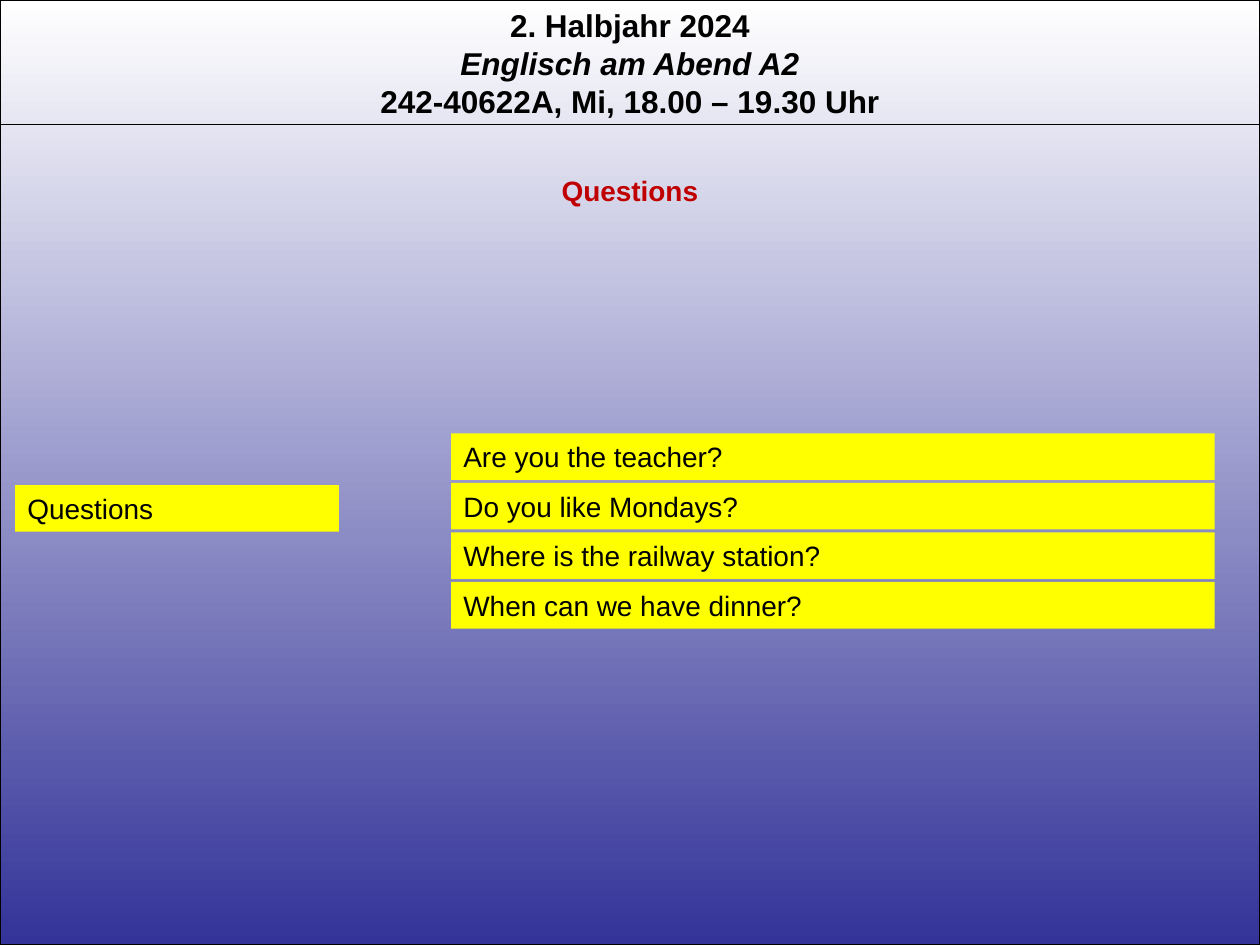
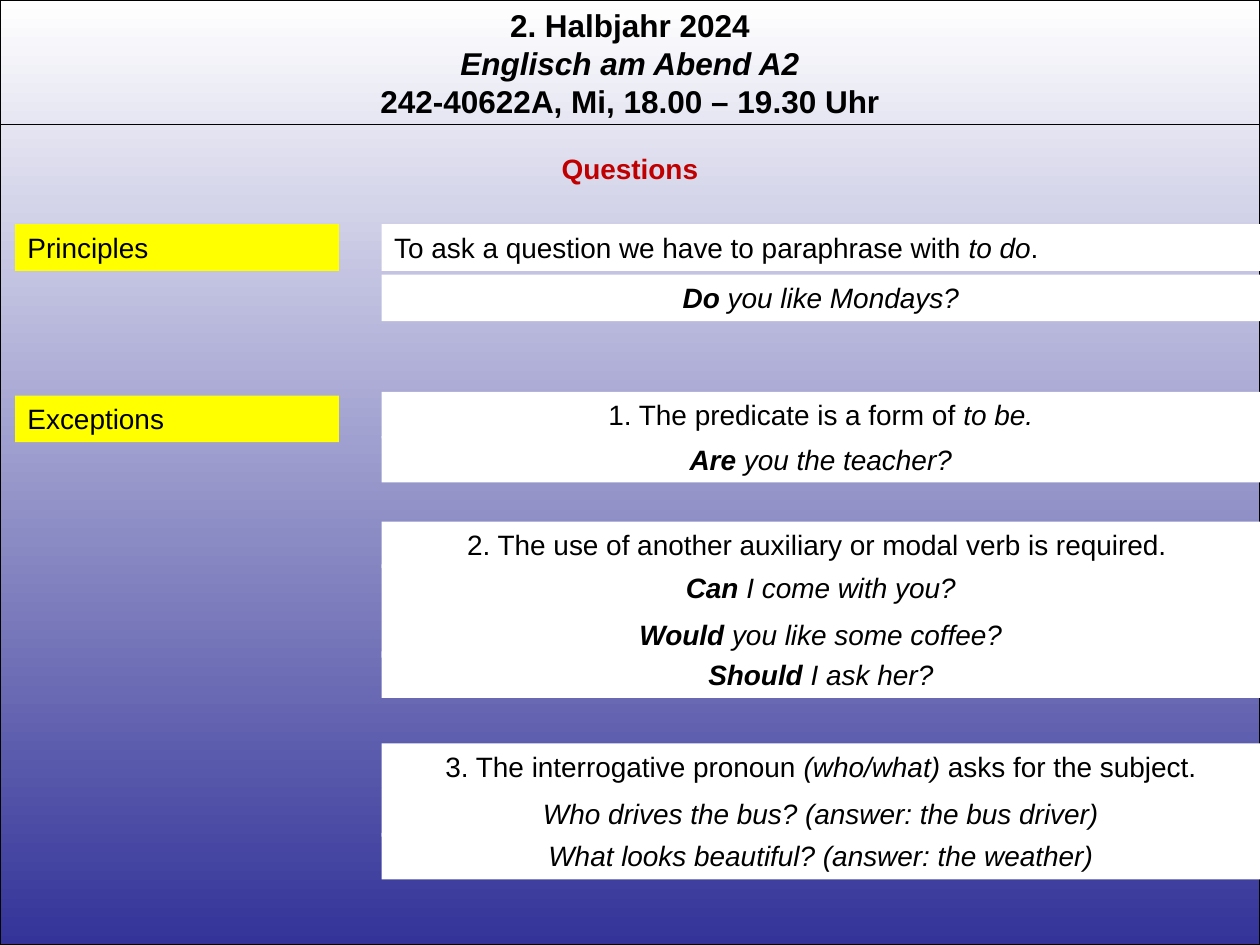
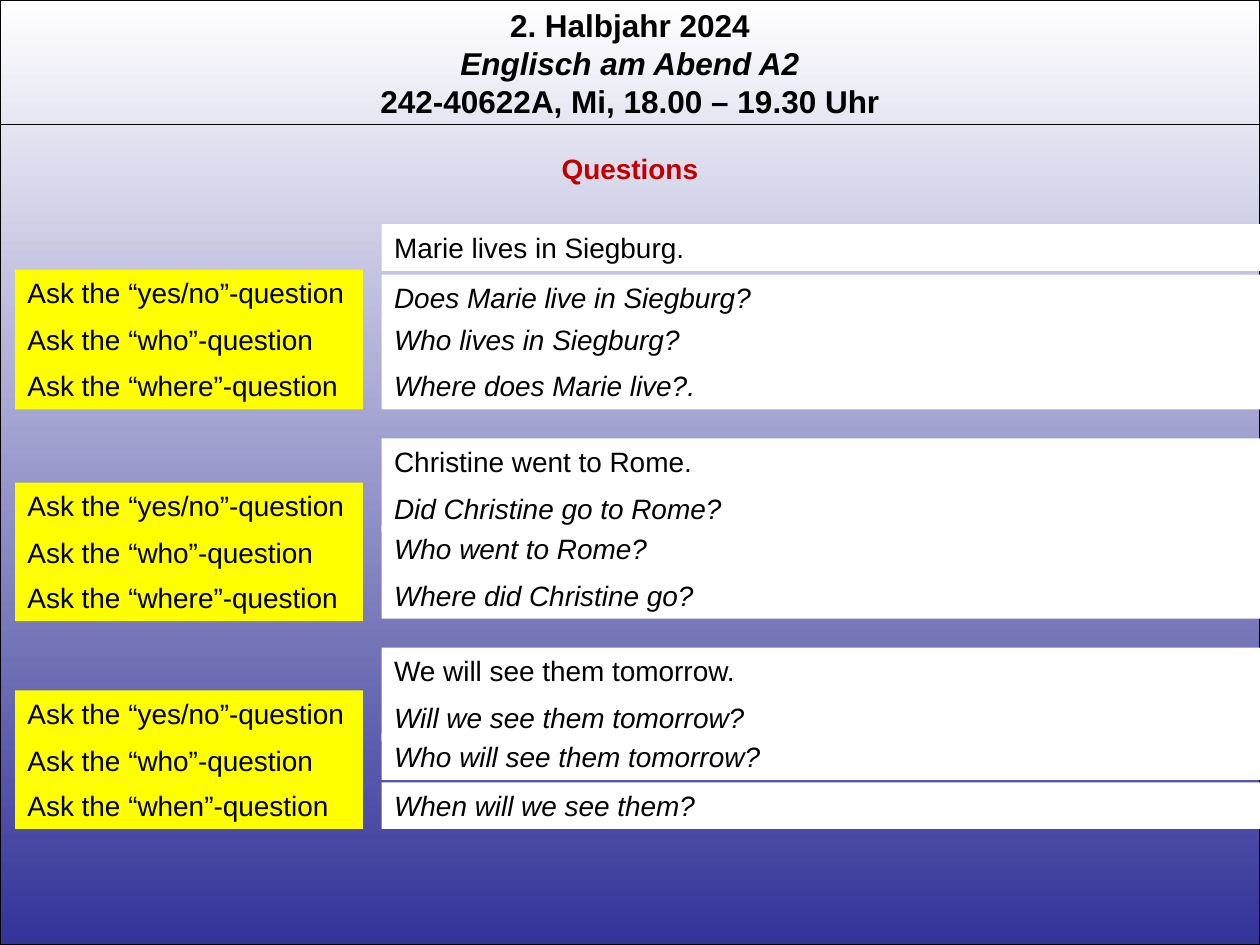
from dataclasses import dataclass

from lxml import etree
from pptx import Presentation
from pptx.dml.color import RGBColor
from pptx.enum.shapes import MSO_CONNECTOR, MSO_SHAPE
from pptx.enum.text import MSO_ANCHOR, MSO_AUTO_SIZE, PP_ALIGN
from pptx.oxml.ns import qn
from pptx.util import Inches, Pt


@dataclass(frozen=True)
class Theme:
    font: str = "Arial"
    head: float = 18
    body: float = 16
    rule: float = 0.75
    black: RGBColor = RGBColor(0, 0, 0)
    white: RGBColor = RGBColor(255, 255, 255)
    blue: RGBColor = RGBColor(0x33, 0x33, 0x99)
    red: RGBColor = RGBColor(0xC0, 0, 0)
    yellow: RGBColor = RGBColor(255, 255, 0)


theme = Theme()
LEFT, ALIGN = PP_ALIGN.LEFT, PP_ALIGN.CENTER
WIDE, HIGH, ROW = 10, 7.5, 0.37
ASK_X, REPLY_X = 0.12, 3.03
REPLY_W = WIDE - REPLY_X


def write(para, runs, size=theme.body, color=theme.black, align=LEFT):
    """Add (text, style) runs; the style may hold b for bold and i for italic."""
    para.alignment = align
    for text, style in runs:
        run = para.add_run()
        run.text = text
        font = run.font
        font.name, font.size = theme.font, Pt(size)
        font.bold, font.italic = "b" in style, "i" in style
        font.color.rgb = color


def label(slide, x, y, width, runs, fill=None, color=theme.black, align=LEFT):
    """Place one row of text, on a filled bar when a fill is given."""
    spot = Inches(x), Inches(y), Inches(width), Inches(ROW)
    if fill is None:
        shape = slide.shapes.add_textbox(*spot)
    else:
        shape = slide.shapes.add_shape(MSO_SHAPE.RECTANGLE, *spot)
        shape.shadow.inherit = False
        shape.fill.solid()
        shape.fill.fore_color.rgb = fill
        shape.line.fill.background()
    frame = shape.text_frame
    frame.word_wrap = True
    frame.auto_size = MSO_AUTO_SIZE.SHAPE_TO_FIT_TEXT
    frame.vertical_anchor = MSO_ANCHOR.TOP
    write(frame.paragraphs[0], runs, color=color, align=align)


deck = Presentation()
deck.slide_width, deck.slide_height = Inches(WIDE), Inches(HIGH)
blank = deck.slide_layouts[6]
slides = [deck.slides.add_slide(blank) for _ in range(3)]
first, rules, drill = slides

# Backdrop and course header, moved to the layout that all slides share
back = first.shapes.add_shape(MSO_SHAPE.RECTANGLE, 0, 0, Inches(WIDE), Inches(HIGH))
back.shadow.inherit = False
back.fill.gradient()
back.fill.gradient_angle = 270
for stop, place, tint in zip(back.fill.gradient_stops, (0, 1), (theme.white, theme.blue)):
    stop.position = place
    stop.color.rgb = tint

head = first.shapes.add_textbox(0, 0, Inches(WIDE), Inches(1.01))
head.text_frame.word_wrap = True
head.text_frame.auto_size = MSO_AUTO_SIZE.SHAPE_TO_FIT_TEXT
course = [
    ("2. Halbjahr 2024", "b"),
    ("Englisch am Abend A2", "bi"),
    ("242-40622A, Mi, 18.00 – 19.30 Uhr", "b"),
]
for n, line in enumerate(course):
    para = head.text_frame.add_paragraph() if n else head.text_frame.paragraphs[0]
    write(para, [line], size=theme.head, align=ALIGN)

rule = first.shapes.add_connector(
    MSO_CONNECTOR.STRAIGHT, 0, Inches(0.99), Inches(WIDE), Inches(0.99))
etree.SubElement(rule.element.spPr, qn("a:effectLst"))
for shape in (back, rule):
    shape.line.color.rgb = theme.black
    shape.line.width = Pt(theme.rule)

for holder in list(blank.placeholders):
    blank.shapes.element.remove(holder.element)
for shape in (back, head, rule):
    blank.shapes.element.append(shape.element)

for slide, y in zip(slides, (1.33, 1.15, 1.15)):
    label(slide, 0, y, WIDE, [("Questions", "b")], color=theme.red, align=ALIGN)

# Slide 1: sample questions
label(first, ASK_X, 3.85, 2.57, [("Questions", "")], theme.yellow)
samples = [
    "Are you the teacher?",
    "Do you like Mondays?",
    "Where is the railway station?",
    "When can we have dinner?",
]
for n, text in enumerate(samples):
    label(first, 3.58, 3.44 + n * 0.393, 6.06, [(text, "")], theme.yellow)

# Slide 2: principles and exceptions
for y, text in ((1.78, "Principles"), (3.14, "Exceptions")):
    label(rules, ASK_X, y, 2.57, [(text, "")], theme.yellow)

basis = [("To ask a question we have to paraphrase with ", ""), ("to do", "i"), (".", "")]
label(rules, REPLY_X, 1.78, REPLY_W, basis, theme.white)
cases = [
    (2.18, [("Do", "bi"), (" you like Mondays?", "i")]),
    (3.11, [("1. The predicate is a form of ", ""), ("to be.", "i")]),
    (3.46, [("Are", "bi"), (" you the teacher?", "i")]),
    (4.14, [("2. The use of another auxiliary or modal verb is required. ", "")]),
    (4.48, [("Can ", "bi"), ("I come with you?", "i")]),
    (4.85, [("Would ", "bi"), ("you like some coffee?", "i")]),
    (5.17, [("Should ", "bi"), ("I ask her?", "i")]),
    (5.9, [("3. The interrogative pronoun ", ""), ("(who/what) ", "i"),
           ("asks for the subject.", "")]),
    (6.27, [("Who drives the bus? (answer: the bus driver)", "i")]),
    (6.61, [("What looks beautiful? (answer: the weather)", "i")]),
]
for y, runs in cases:
    label(rules, REPLY_X, y, REPLY_W, runs, theme.white, align=ALIGN)

# Slide 3: each statement with its questions (ask top, word, reply top, reply)
tasks = [
    (1.78, "Marie lives in Siegburg.", [
        (2.14, "yes/no", 2.18, "Does Marie live in Siegburg?"),
        (2.51, "who", 2.51, "Who lives in Siegburg?"),
        (2.88, "where", 2.88, "Where does Marie live?."),
    ]),
    (3.48, "Christine went to Rome.", [
        (3.83, "yes/no", 3.85, "Did Christine go to Rome?"),
        (4.2, "who", 4.17, "Who went to Rome?"),
        (4.56, "where", 4.54, "Where did Christine go?"),
    ]),
    (5.14, "We will see them tomorrow.", [
        (5.48, "yes/no", 5.51, "Will we see them tomorrow?"),
        (5.85, "who", 5.82, "Who will see them tomorrow?"),
        (6.21, "when", 6.21, "When will we see them?"),
    ]),
]
for top, fact, rows in tasks:
    label(drill, REPLY_X, top, REPLY_W, [(fact, "")], theme.white)
    for ask_y, word, reply_y, reply in rows:
        label(drill, ASK_X, ask_y, 2.76, [(f"Ask the “{word}”-question", "")], theme.yellow)
        label(drill, REPLY_X, reply_y, REPLY_W, [(reply, "i")], theme.white)

deck.save("out.pptx")
